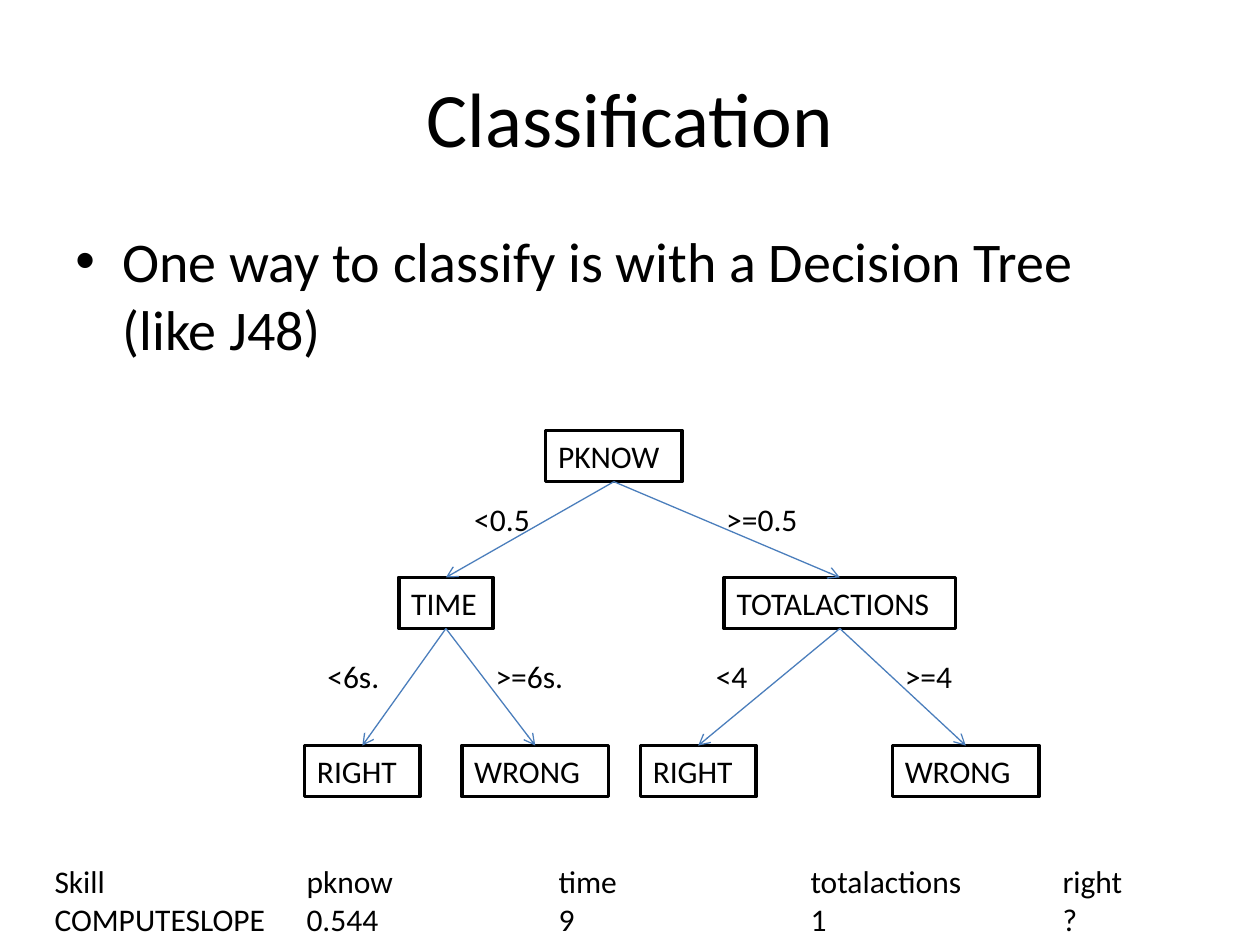
import pptx
import pptx.util
import pptx.dml.color
import pptx.enum.shapes
import pptx.enum.text
import pptx.oxml
import pptx.oxml.ns

Cm = pptx.util.Cm
Pt = pptx.util.Pt
BLACK = pptx.dml.color.RGBColor(0, 0, 0)
WHITE = pptx.dml.color.RGBColor(255, 255, 255)
BLUE = pptx.dml.color.RGBColor(0x4B, 0x7E, 0xBC)
FONT = "Calibri"
HIGH = 1.03  # height of a node or label

# Tree nodes: key, text, left, top, width
NODES = [
    ("root", "PKNOW", 11, 8.68, 2.75),
    ("time", "TIME", 8.04, 11.64, 1.9),
    ("total", "TOTALACTIONS", 14.6, 11.64, 4.66),
    ("fast", "RIGHT", 6.14, 15.03, 2.33),
    ("few", "RIGHT", 12.91, 15.03, 2.33),
    ("slow", "WRONG", 9.31, 15.03, 2.96),
    ("many", "WRONG", 17.99, 15.03, 2.96),
]
# Branches: parent, child, label text, label left, label top
LINKS = [
    ("root", "time", "<0.5", 9.31, 9.95),
    ("root", "total", ">=0.5", 14.39, 9.95),
    ("time", "fast", "<6s.", 6.35, 13.12),
    ("time", "slow", ">=6s.", 9.74, 13.12),
    ("total", "few", "<4", 14.18, 13.12),
    ("total", "many", ">=4", 17.99, 13.12),
]
ROWS = [
    "Skill\t\tpknow\t\ttime\t\ttotalactions\tright",
    "COMPUTESLOPE\t0.544\t\t9\t\t1\t\t?",
]


def add_run(para, text, size):
    run = para.add_run()
    run.text = text
    run.font.name = FONT
    run.font.size = Pt(size)
    run.font.color.rgb = BLACK


def add_text(slide, lines, left, top, width, height, size=18):
    box = slide.shapes.add_textbox(Cm(left), Cm(top), Cm(width), Cm(height))
    frame = box.text_frame
    frame.word_wrap = True
    for i, line in enumerate(lines):
        para = frame.add_paragraph() if i else frame.paragraphs[0]
        add_run(para, line, size)
    return frame


def add_title(slide, text):
    title = slide.shapes.title
    title.left, title.top = Cm(1.27), Cm(0.76)
    title.width, title.height = Cm(22.86), Cm(3.18)
    frame = title.text_frame
    frame.vertical_anchor = pptx.enum.text.MSO_ANCHOR.MIDDLE
    para = frame.paragraphs[0]
    para.alignment = pptx.enum.text.PP_ALIGN.CENTER
    add_run(para, text, 44)


def add_point(slide, text):
    frame = add_text(slide, [text], 1.27, 4.45, 22.43, 3.6, 32)
    para = frame.paragraphs[0]
    para.space_before = Pt(6.4)
    # Hanging bullet
    props = para._p.get_or_add_pPr()
    props.set("marL", str(Cm(0.95)))
    props.set("indent", str(-Cm(0.95)))
    for tag, key, value in (("a:buFont", "typeface", "Arial"),
                            ("a:buChar", "char", "•")):
        item = pptx.oxml.parse_xml(
            f'<{tag} {pptx.oxml.ns.nsdecls("a")} {key}="{value}"/>')
        props.append(item)


def add_node(slide, text, left, top, width):
    node = slide.shapes.add_shape(
        pptx.enum.shapes.MSO_SHAPE.RECTANGLE,
        Cm(left), Cm(top), Cm(width), Cm(HIGH))
    node.shadow.inherit = False
    node.fill.solid()
    node.fill.fore_color.rgb = WHITE
    node.line.color.rgb = BLACK
    node.line.width = Pt(2)
    frame = node.text_frame
    frame.word_wrap = True
    frame.vertical_anchor = pptx.enum.text.MSO_ANCHOR.TOP
    para = frame.paragraphs[0]
    para.alignment = pptx.enum.text.PP_ALIGN.LEFT
    add_run(para, text, 18)
    return node


def add_arrow(slide, start, end):
    arrow = slide.shapes.add_connector(
        pptx.enum.shapes.MSO_CONNECTOR.STRAIGHT, 0, 0, 0, 0)
    arrow.begin_connect(start, 2)
    arrow.end_connect(end, 0)
    arrow.line.color.rgb = BLUE
    arrow.line.width = Pt(0.75)
    names = pptx.oxml.ns.nsdecls("a")
    head = pptx.oxml.parse_xml(f'<a:tailEnd {names} type="arrow"/>')
    arrow.line._get_or_add_ln().append(head)
    bare = pptx.oxml.parse_xml(f"<a:effectLst {names}/>")
    arrow._element.spPr.append(bare)


def add_data(slide):
    frame = add_text(slide, ROWS, 0.85, 17.25, 23.92, 1.8)
    for para in frame.paragraphs:
        para._p.get_or_add_pPr().set("defTabSz", str(Cm(2.54)))


def main():
    deck = pptx.Presentation()
    deck.slide_width, deck.slide_height = Cm(25.4), Cm(19.05)
    slide = deck.slides.add_slide(deck.slide_layouts[5])

    # Heading and bullet
    add_title(slide, "Classification")
    add_point(slide, "One way to classify is with a Decision Tree (like J48)")

    # Decision tree
    nodes = {key: add_node(slide, *rest) for key, *rest in NODES}
    for start, end, *_ in LINKS:
        add_arrow(slide, nodes[start], nodes[end])
    for _, _, text, left, top in LINKS:
        frame = add_text(slide, [text], left, top, 2.33, HIGH)
        frame.paragraphs[0].space_before = Pt(9)

    # Example record
    add_data(slide)
    deck.save("out.pptx")


if __name__ == "__main__":
    main()
